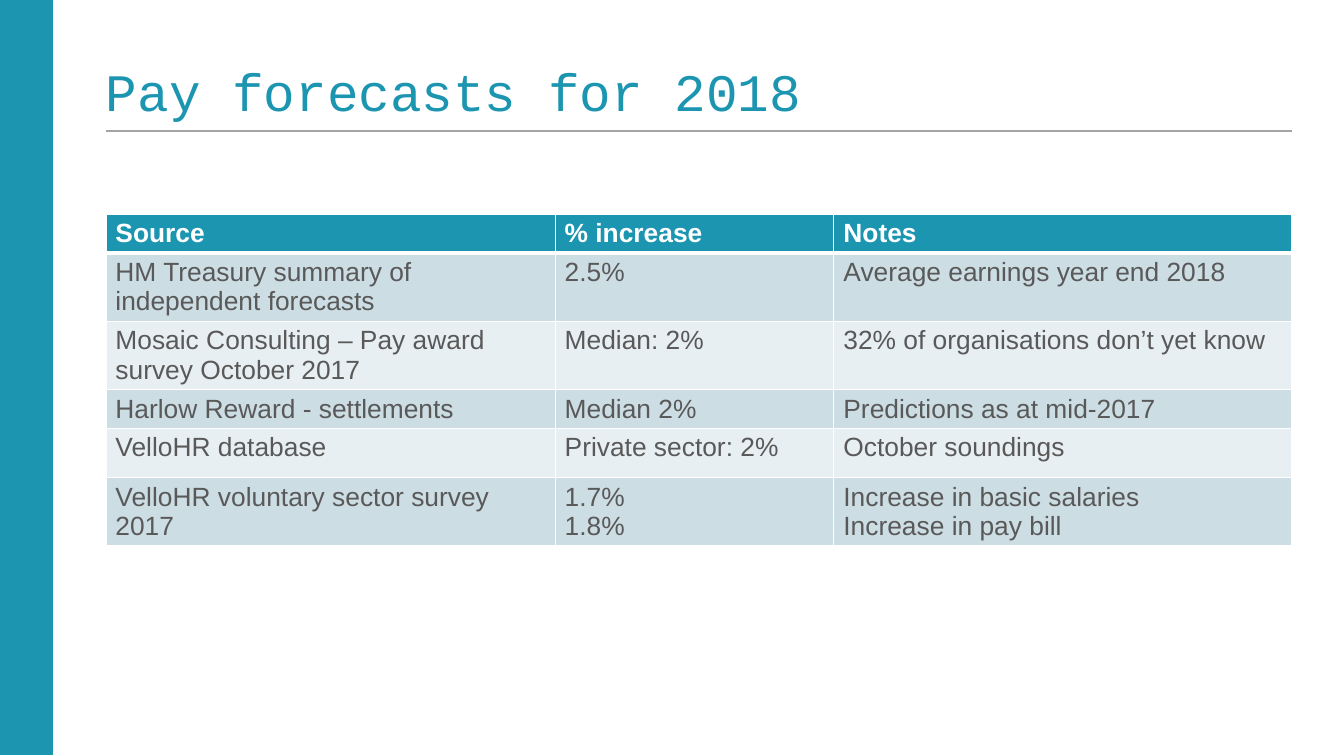
from lxml.etree import SubElement
from pptx import Presentation
from pptx.dml.color import RGBColor
from pptx.enum.shapes import MSO_CONNECTOR, MSO_SHAPE
from pptx.enum.text import MSO_ANCHOR, MSO_AUTO_SIZE, PP_ALIGN
from pptx.oxml.ns import qn
from pptx.util import Cm, Pt

TEAL = RGBColor(0x1C, 0x95, 0xB1)
RULE_GREY = RGBColor(0xA3, 0xA4, 0xA6)
TEXT_GREY = RGBColor(0x59, 0x59, 0x59)
WHITE = RGBColor(0xFF, 0xFF, 0xFF)
BANDS = (RGBColor(0xCD, 0xDD, 0xE4), RGBColor(0xE8, 0xEF, 0xF2))

SLIDE_W, SLIDE_H = Cm(36.02), Cm(20.24)
LEFT, CONTENT_W = Cm(2.84), Cm(31.78)

COL_WIDTHS = (12.04, 7.47, 12.27)
ROW_HEIGHTS = (1.04, 1.82, 1.82, 1.04, 1.32, 1.82)
FORECASTS = (
    ("Source", "% increase", "Notes"),
    ("HM Treasury summary of independent forecasts", "2.5%",
     "Average earnings year end 2018"),
    ("Mosaic Consulting – Pay award survey October 2017", "Median: 2%",
     "32% of organisations don’t yet know"),
    ("Harlow Reward - settlements", "Median 2%", "Predictions as at mid-2017"),
    ("VelloHR database", "Private sector: 2%", "October soundings"),
    ("VelloHR voluntary sector survey 2017", "1.7%\n1.8%",
     "Increase in basic salaries\nIncrease in pay bill"),
)


def add_sidebar(s, x, y, w, h):
    """Draw the teal band down the side of the slide."""
    sp = s.shapes.add_shape(MSO_SHAPE.RECTANGLE, x, y, w, h)
    sp.shadow.inherit = False
    sp.fill.solid()
    sp.fill.fore_color.rgb = TEAL
    sp.line.fill.background()


def add_heading(s, text, x, y, w, h):
    """Fill the title placeholder and rule a line beneath it."""
    sp = s.shapes.title
    sp.left, sp.top, sp.width, sp.height = x, y, w, h
    tf = sp.text_frame
    tf.text = text
    tf.word_wrap = True
    tf.auto_size = MSO_AUTO_SIZE.NONE
    tf.vertical_anchor = MSO_ANCHOR.TOP
    tf.margin_left = tf.margin_right = tf.margin_bottom = 0
    tf.margin_top = Cm(0.28)
    p = tf.paragraphs[0]
    p.alignment = PP_ALIGN.LEFT
    p.line_spacing = 0.8
    font = p.runs[0].font
    font.name, font.size = "Courier New", Pt(40)
    font.color.rgb = TEAL

    rule_y = y + h + Cm(0.38)
    rule = s.shapes.add_connector(MSO_CONNECTOR.STRAIGHT, x, rule_y, x + w, rule_y)
    rule.line.color.rgb = RULE_GREY
    rule.line.width = Pt(1)
    SubElement(rule._element.spPr, qn("a:effectLst"))


def set_borders(cell, top, bottom):
    """Give a cell white borders with the top and bottom widths in points."""
    tcPr = cell._tc.get_or_add_tcPr()
    for side, width in (("L", 1), ("R", 1), ("T", top), ("B", bottom)):
        ln = SubElement(tcPr, qn(f"a:ln{side}"), w=str(Pt(width)))
        fill = SubElement(ln, qn("a:solidFill"))
        SubElement(fill, qn("a:srgbClr"), val=str(WHITE))


def format_cell(cell, text, row):
    """Write and style one cell according to its row."""
    header = row == 0
    set_borders(cell, 3 if row == 1 else 1, 3 if header else 1)
    cell.fill.solid()
    cell.fill.fore_color.rgb = TEAL if header else BANDS[(row - 1) % 2]
    cell.text = text
    for p in cell.text_frame.paragraphs:
        for r in p.runs:
            r.font.name, r.font.size = "Arial", Pt(20)
            r.font.bold = header
            r.font.color.rgb = WHITE if header else TEXT_GREY


def add_forecast_table(s, x, y, w):
    """Build the banded table of pay forecasts."""
    table = s.shapes.add_table(len(FORECASTS), len(COL_WIDTHS), x, y, w,
                               Cm(sum(ROW_HEIGHTS))).table
    for column, width in zip(table.columns, COL_WIDTHS):
        column.width = Cm(width)
    for i, (height, texts) in enumerate(zip(ROW_HEIGHTS, FORECASTS)):
        table.rows[i].height = Cm(height)
        for j, text in enumerate(texts):
            format_cell(table.cell(i, j), text, i)


def main():
    """Build and save the pay forecasts slide."""
    prs = Presentation()
    prs.slide_width, prs.slide_height = SLIDE_W, SLIDE_H
    s = prs.slides.add_slide(prs.slide_layouts[5])
    add_sidebar(s, 0, 0, Cm(1.42), SLIDE_H)
    add_heading(s, "Pay forecasts for 2018", LEFT, Cm(1.63), CONTENT_W, Cm(1.5))
    add_forecast_table(s, LEFT, Cm(5.74), CONTENT_W)
    prs.save("out.pptx")


if __name__ == "__main__":
    main()
